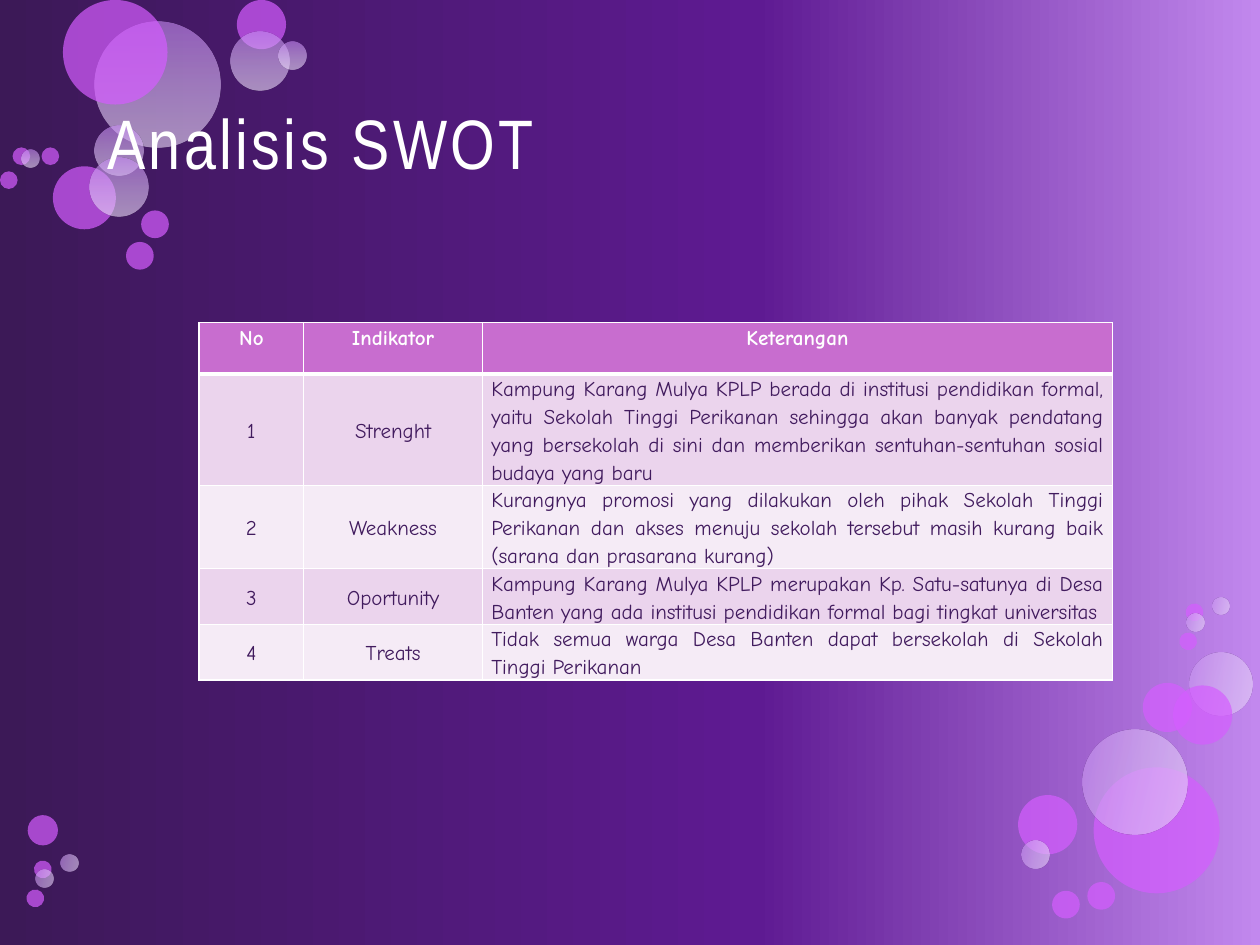
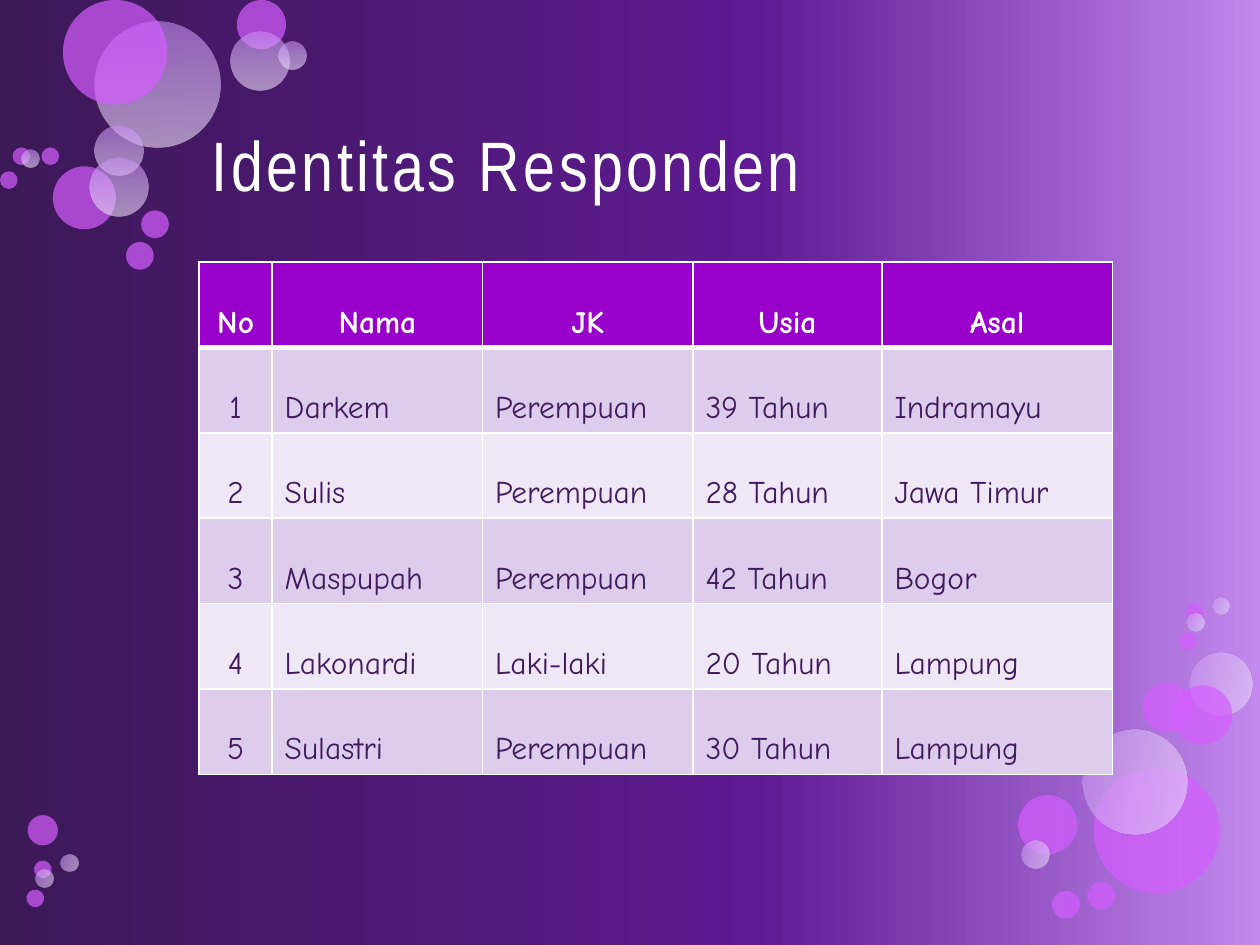
from dataclasses import dataclass

from lxml import etree
from pptx import Presentation
from pptx import util as u
from pptx.dml.color import RGBColor
from pptx.enum import shapes, text
from pptx.oxml.ns import qn

# Shared look: the page is a grid of 100 columns by 75 rows
WIDTH, HEIGHT = u.Inches(10), u.Inches(7.5)
CELL = WIDTH / 100
WHITE, INK, VIOLET = "FFFFFF", "411B5E", "D55DFF"
BACKDROP = [(0, "3C1957"), (60, "5E1A92"), (100, "C288EE")]
PALE = [(0, "C68CF2"), (50, "DABAF5"), (100, "ECDEF9")]
TITLE_FONT, TABLE_FONT = "Arial Narrow", "Comic Neue"
TITLE_ONLY = 5
LEFT, CENTER, JUSTIFY = (text.PP_ALIGN.LEFT, text.PP_ALIGN.CENTER,
                         text.PP_ALIGN.JUSTIFY)


@dataclass(frozen=True)
class Bubble:
    left: float
    top: float
    size: float
    pale: bool = False


@dataclass(frozen=True)
class TableStyle:
    header: str
    bands: tuple[str, str]
    size: int
    spacing: float
    aligns: tuple
    body_anchor: text.MSO_ANCHOR
    inset: tuple[float, float]


@dataclass(frozen=True)
class TablePage:
    title: str
    title_at: tuple[float, float]
    table_top: float
    table_height: float
    columns: tuple[float, ...]
    rows: list[tuple[str, ...]]
    style: TableStyle


UPRIGHT_BUBBLES = [
    Bubble(7.5, 1.7, 10, True), Bubble(4.2, 13.2, 5),
    Bubble(7.5, 10, 3.9, True), Bubble(7.1, 12.5, 4.7, True),
    Bubble(5, 0, 8.3), Bubble(18.8, 0, 3.9),
    Bubble(18.3, 2.5, 4.7, True), Bubble(22.1, 3.3, 2.2, True),
    Bubble(11.2, 16.7, 2.2), Bubble(1, 11.7, 1.4),
    Bubble(10, 19.2, 2.2), Bubble(0, 13.6, 1.4),
    Bubble(1.7, 11.9, 1.4, True), Bubble(3.3, 11.7, 1.4),
]
TURNED_BUBBLES = [
    Bubble(86.8, 60.9, 10), Bubble(94.4, 51.8, 5, True),
    Bubble(90.7, 54.2, 3.9), Bubble(93.1, 54.4, 4.7),
    Bubble(85.9, 57.9, 8.3, True), Bubble(2.2, 64.7, 2.4),
    Bubble(80.8, 63.1, 4.7), Bubble(81.1, 66.7, 2.2, True),
    Bubble(83.5, 70.7, 2.2), Bubble(94.1, 47.9, 1.4),
    Bubble(86.3, 70, 2.2), Bubble(96.2, 47.4, 1.4, True),
    Bubble(94.2, 48.7, 1.4, True), Bubble(93.6, 50.2, 1.4),
    Bubble(2.7, 68.3, 1.4), Bubble(4.8, 67.8, 1.4, True),
    Bubble(2.8, 69, 1.4, True), Bubble(2.1, 70.6, 1.4),
]

PAGES = [
    TablePage(
        "Analisis SWOT", (7.5, 5), 25.6, 31.7, (8.3, 14.2, 50),
        [
            ("No", "Indikator", "Keterangan"),
            ("1", "Strenght",
             "Kampung Karang Mulya KPLP berada di institusi pendidikan "
             "formal, yaitu Sekolah Tinggi Perikanan sehingga akan banyak "
             "pendatang yang bersekolah di sini dan memberikan "
             "sentuhan-sentuhan sosial budaya yang baru"),
            ("2", "Weakness",
             "Kurangnya promosi yang dilakukan oleh pihak Sekolah Tinggi "
             "Perikanan dan akses menuju sekolah tersebut masih kurang baik "
             "(sarana dan prasarana kurang)"),
            ("3", "Oportunity",
             "Kampung Karang Mulya KPLP merupakan Kp. Satu-satunya di Desa "
             "Banten yang ada institusi pendidikan formal bagi tingkat "
             "universitas"),
            ("4", "Treats",
             "Tidak semua warga Desa Banten dapat bersekolah di Sekolah "
             "Tinggi Perikanan"),
        ],
        TableStyle("C86DCF", ("EBD4ED", "F5EBF6"), 12, 1.15,
                   (CENTER, CENTER, JUSTIFY), text.MSO_ANCHOR.MIDDLE,
                   (0.7, 0)),
    ),
    TablePage(
        "Identitas Responden", (15.8, 6.7), 20.8, 36.8,
        (5.8, 16.7, 16.7, 15, 18.3),
        [
            ("No", "Nama", "JK", "Usia", "Asal"),
            ("1", "Darkem", "Perempuan", "39 Tahun", "Indramayu"),
            ("2", "Sulis", "Perempuan", "28 Tahun", "Jawa Timur"),
            ("3", "Maspupah", "Perempuan", "42 Tahun", "Bogor"),
            ("4", "Lakonardi", "Laki-laki", "20 Tahun", "Lampung"),
            ("5", "Sulastri", "Perempuan", "30 Tahun", "Lampung"),
        ],
        TableStyle("9900CC", ("DECCEC", "EFE7F6"), 18, 2,
                   (CENTER, LEFT, LEFT, LEFT, LEFT), text.MSO_ANCHOR.TOP,
                   (1, 0.5)),
    ),
]


def cells(count: float) -> int:
    """Length of a number of grid cells."""
    return round(count * CELL)


def colour(code: str) -> RGBColor:
    return RGBColor.from_string(code)


def set_alpha(element, percent: int) -> None:
    etree.SubElement(element, qn("a:alpha"), val=str(percent * 1000))


def set_gradient(fill, owner, stops: list, angle: int, alpha: int = 100) -> None:
    fill.gradient()
    fill.gradient_angle = angle
    stop_list = owner.find(".//" + qn("a:gsLst"))
    for stop in list(stop_list):
        stop_list.remove(stop)
    for position, code in stops:
        stop = etree.SubElement(stop_list, qn("a:gs"), pos=str(position * 1000))
        shade = etree.SubElement(stop, qn("a:srgbClr"), val=code)
        if alpha < 100:
            set_alpha(shade, alpha)


def format_span(span, font: str, size: int, code: str, bold: bool = False) -> None:
    span.font.name = font
    span.font.size = u.Pt(size)
    span.font.bold = bold
    span.font.color.rgb = colour(code)


# Bubbles
def draw_bubble(page, bubble: Bubble, turned: bool) -> None:
    size = cells(bubble.size)
    circle = page.shapes.add_shape(shapes.MSO_SHAPE.OVAL, cells(bubble.left),
                                   cells(bubble.top), size, size)
    circle.shadow.inherit = False
    circle.line.fill.background()
    if bubble.pale:
        set_gradient(circle.fill, circle.element, PALE, 270, 60)
    else:
        circle.fill.solid()
        circle.fill.fore_color.rgb = colour(VIOLET)
        set_alpha(circle.element.spPr.find(".//" + qn("a:srgbClr")), 70)
    if turned:
        circle.rotation = 103.3
        circle.element.spPr.find(qn("a:xfrm")).set("flipV", "1")


# Title
def place_title(page, table_page: TablePage) -> None:
    title = page.shapes.title
    title.left, title.top = map(cells, table_page.title_at)
    title.width, title.height = cells(72.5), cells(12.5)
    frame = title.text_frame
    frame.text = table_page.title
    frame.word_wrap = True
    frame.auto_size = text.MSO_AUTO_SIZE.NONE
    frame.vertical_anchor = text.MSO_ANCHOR.MIDDLE
    para = frame.paragraphs[0]
    para.alignment = LEFT
    span = para.runs[0]
    format_span(span, TITLE_FONT, 40, WHITE)
    span.font.element.set("spc", "200") if hasattr(span.font, "element") else \
        para.runs[0]._r.get_or_add_rPr().set("spc", "200")
    # Bring the title in front of the bubbles
    title.element.getparent().append(title.element)


# Table
def set_borders(cell, top: int, bottom: int) -> None:
    properties = cell._tc.get_or_add_tcPr()
    widths = {"lnL": 1, "lnR": 1, "lnT": top, "lnB": bottom}
    for index, (side, points) in enumerate(widths.items()):
        line = etree.Element(qn("a:" + side), w=str(u.Pt(points)))
        fill = etree.SubElement(line, qn("a:solidFill"))
        etree.SubElement(fill, qn("a:srgbClr"), val=WHITE)
        properties.insert(index, line)


def format_cell(cell, style: TableStyle, row: int, column: int) -> None:
    header = row == 0
    cell.fill.solid()
    cell.fill.fore_color.rgb = colour(
        style.header if header else style.bands[(row - 1) % 2])
    cell.margin_left = cell.margin_right = cells(style.inset[0])
    cell.margin_top = cell.margin_bottom = cells(style.inset[1])
    cell.vertical_anchor = text.MSO_ANCHOR.TOP if header else style.body_anchor
    para = cell.text_frame.paragraphs[0]
    para.alignment = CENTER if header else style.aligns[column]
    para.line_spacing = float(style.spacing)
    format_span(para.runs[0], TABLE_FONT, style.size,
                WHITE if header else INK, header)
    set_borders(cell, 3 if row == 1 else 1, 3 if header else 1)


def draw_table(page, table_page: TablePage) -> None:
    holder = page.shapes.add_table(
        len(table_page.rows), len(table_page.columns), cells(15.8),
        cells(table_page.table_top), cells(72.5),
        cells(table_page.table_height))
    table = holder.table
    for column, width in zip(table.columns, table_page.columns):
        column.width = cells(width)
    for row, words in enumerate(table_page.rows):
        table.rows[row].height = cells(4.1)
        for column, word in enumerate(words):
            cell = table.cell(row, column)
            cell.text_frame.text = word
            format_cell(cell, table_page.style, row, column)
    holder.height = cells(table_page.table_height)


def main() -> None:
    deck = Presentation()
    deck.slide_width, deck.slide_height = WIDTH, HEIGHT
    master = deck.slide_master
    set_gradient(master.background.fill, master.element, BACKDROP, 0)
    for table_page in PAGES:
        page = deck.slides.add_slide(deck.slide_layouts[TITLE_ONLY])
        for bubble in UPRIGHT_BUBBLES:
            draw_bubble(page, bubble, turned=False)
        for bubble in TURNED_BUBBLES:
            draw_bubble(page, bubble, turned=True)
        place_title(page, table_page)
        draw_table(page, table_page)
    deck.save("out.pptx")


if __name__ == "__main__":
    main()
